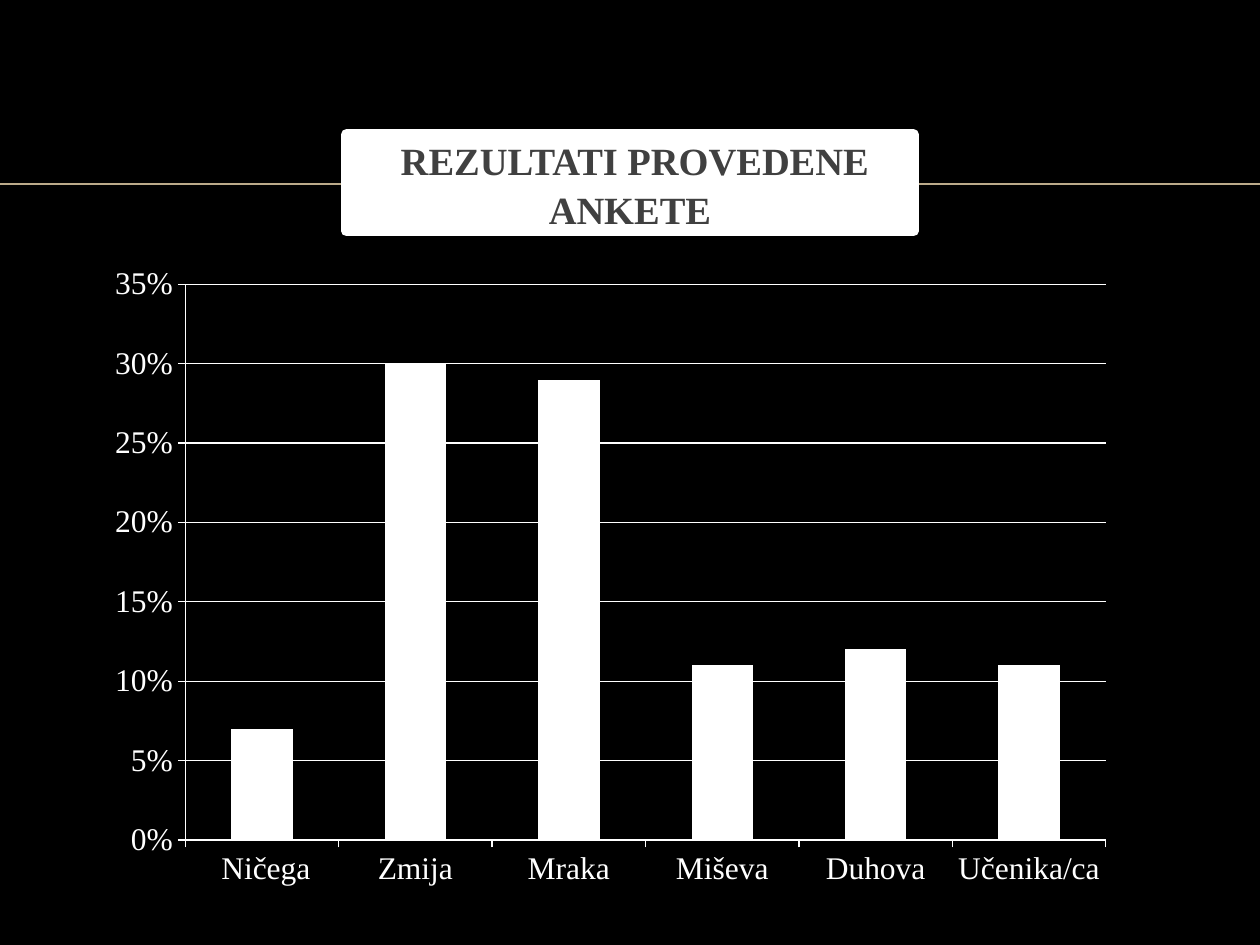
from pptx import Presentation
from pptx.chart.data import CategoryChartData
from pptx.dml.color import RGBColor
from pptx.enum.chart import XL_CHART_TYPE, XL_TICK_MARK
from pptx.enum.shapes import MSO_CONNECTOR, MSO_SHAPE
from pptx.enum.text import MSO_ANCHOR, PP_ALIGN
from pptx.oxml.ns import qn
from pptx.util import Pt
from lxml.etree import SubElement

BLACK = RGBColor(0x00, 0x00, 0x00)
WHITE = RGBColor(0xFF, 0xFF, 0xFF)
SAND = RGBColor(0xBB, 0xAA, 0x8A)
GRAY = RGBColor(0x40, 0x40, 0x40)
FONT = "Times New Roman"

prs = Presentation()
prs.slide_width, prs.slide_height = Pt(720), Pt(540)
s = prs.slides.add_slide(prs.slide_layouts[6])
s.background.fill.solid()
s.background.fill.fore_color.rgb = BLACK

rule = s.shapes.add_connector(MSO_CONNECTOR.STRAIGHT, Pt(0), Pt(105), Pt(720), Pt(105))
rule.line.color.rgb = SAND
rule.line.width = Pt(1)
SubElement(rule._element.spPr, qn("a:effectLst"))

sp = s.shapes.add_shape(MSO_SHAPE.RECTANGLE, Pt(198), Pt(76.8), Pt(324), Pt(55.4))
sp.shadow.inherit = False
sp.fill.solid()
sp.fill.fore_color.rgb = WHITE
sp.line.color.rgb = WHITE
sp.line.width = Pt(6)
tf = sp.text_frame
tf.word_wrap = True
tf.vertical_anchor = MSO_ANCHOR.MIDDLE
p = tf.paragraphs[0]
p.alignment = PP_ALIGN.CENTER
p.space_before = Pt(4)
p.line_spacing = 1.06
r = p.add_run()
r.text = " REZULTATI PROVEDENE ANKETE"
r.font.name = FONT
r.font.size = Pt(22)
r.font.bold = True
r.font.color.rgb = GRAY

data = CategoryChartData(number_format="0%")
data.categories = [" Ničega", "Zmija", "Mraka", "Miševa", "Duhova", "Učenika/ca"]
data.add_series("Series 1", [0.07, 0.3, 0.29, 0.11, 0.12, 0.11])
chart = s.shapes.add_chart(XL_CHART_TYPE.COLUMN_CLUSTERED, Pt(54), Pt(145.4),
                           Pt(589.7), Pt(368.6), data).chart
chart.has_title = False
chart.has_legend = False
chart.font.name = FONT
chart.font.size = Pt(18)
chart.font.color.rgb = WHITE

plot = chart.plots[0]
plot.gap_width = 150
plot.vary_by_categories = False
bars = plot.series[0]
bars.invert_if_negative = False
bars.format.fill.solid()
bars.format.fill.fore_color.rgb = WHITE

for axis in (chart.category_axis, chart.value_axis):
    axis.major_tick_mark = XL_TICK_MARK.OUTSIDE
    axis.minor_tick_mark = XL_TICK_MARK.NONE
    axis.format.line.color.rgb = WHITE
    axis.format.line.width = Pt(0.75)

val = chart.value_axis
val.minimum_scale, val.maximum_scale, val.major_unit = 0, 0.35, 0.05
val.tick_labels.number_format = "0%"
val.tick_labels.number_format_is_linked = False
val.has_major_gridlines = True
val.major_gridlines.format.line.color.rgb = WHITE
val.major_gridlines.format.line.width = Pt(0.75)

prs.save("out.pptx")
